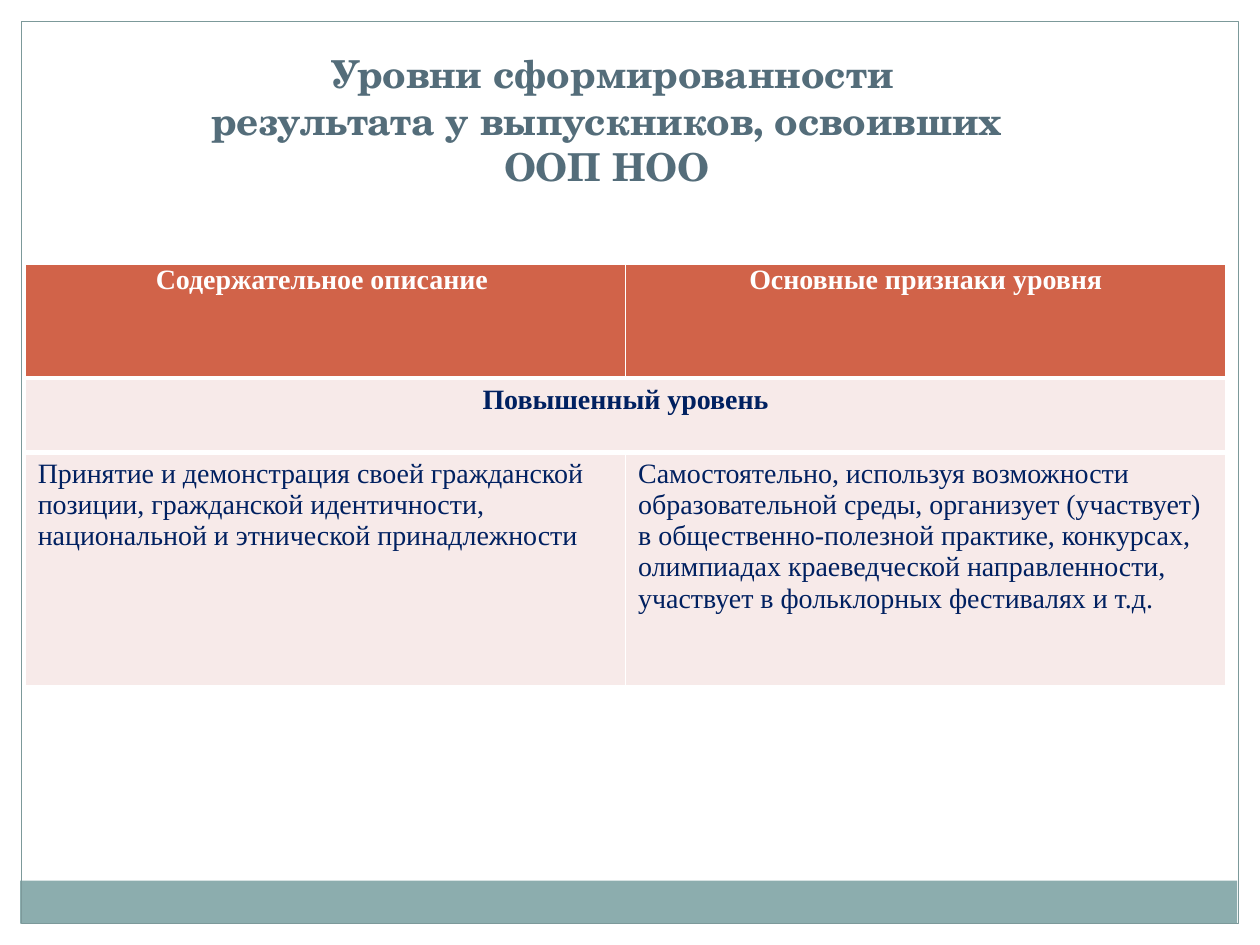
import pptx
import pptx.util
import pptx.dml.color
import pptx.enum.shapes
import pptx.enum.text
import pptx.oxml
import pptx.oxml.ns

Inches = pptx.util.Inches
Pt = pptx.util.Pt
ALIGN = pptx.enum.text.PP_ALIGN

# Content
TITLE = "Уровни сформированности\vрезультата у выпускников, освоивших \vООП НОО "
HEADERS = ["Содержательное описание ", "Основные признаки уровня"]
LEVEL = ["Повышенный уровень", ""]
DESCRIPTION = [
    "Принятие и демонстрация своей гражданской позиции, гражданской "
    "идентичности, национальной и этнической принадлежности",
    "Самостоятельно, используя возможности образовательной среды, организует "
    "(участвует) в общественно-полезной практике, конкурсах, олимпиадах "
    "краеведческой направленности, участвует в фольклорных фестивалях и т.д.",
]
COLORS = {
    "white": "FFFFFF", "band": "8CADAE", "frame": "7C999A", "title": "546D7A",
    "header": "D16349", "body": "F7EAE9", "text": "002060",
}
# Each row: texts, height, fill, text colour, bold, alignment, side and top insets,
# top and bottom border widths
ROWS = [
    (HEADERS, 0.9, "header", "white", True, ALIGN.CENTER, (0.07, 0), (1, 3)),
    (LEVEL, 0.59, "body", "text", True, ALIGN.CENTER, (0.1, 0.05), (3, 3)),
    (DESCRIPTION, 1.85, "body", "text", False, ALIGN.LEFT, (0.1, 0.05), (3, 1)),
]
# Page edges (top, right, left) and bottom band: left, top, width, height, fill
MARGIN = 0.17
FILLED_BARS = [
    (0, 0, 10, MARGIN, "white"),
    (10 - MARGIN, 0, MARGIN, 7.5, "white"),
    (0, 0, MARGIN, 7.5, "white"),
    (0.16, 6.99, 9.66, 0.34, "band"),
]


def rgb(name):
    return pptx.dml.color.RGBColor.from_string(COLORS[name])


def format_paragraph(paragraph, font_name, size, color, bold, alignment):
    paragraph.alignment = alignment
    font = paragraph.font
    font.name, font.size, font.bold = font_name, Pt(size), bold
    font.color.rgb = rgb(color)


def add_rectangle(slide, left, top, width, height):
    shape = slide.shapes.add_shape(
        pptx.enum.shapes.MSO_SHAPE.RECTANGLE,
        Inches(left), Inches(top), Inches(width), Inches(height))
    shape.shadow.inherit = False
    return shape


def set_borders(cell, top, bottom):
    properties = cell._tc.get_or_add_tcPr()
    for side, width in (("L", 1), ("R", 1), ("T", top), ("B", bottom)):
        properties.append(pptx.oxml.parse_xml(
            f'<a:ln{side} {pptx.oxml.ns.nsdecls("a")} w="{Pt(width)}"><a:solidFill>'
            f'<a:srgbClr val="{COLORS["white"]}"/></a:solidFill></a:ln{side}>'))


def add_decor(slide):
    for left, top, width, height, color in FILLED_BARS:
        bar = add_rectangle(slide, left, top, width, height)
        bar.fill.solid()
        bar.fill.fore_color.rgb = rgb(color)
        bar.line.fill.background()
    frame = add_rectangle(slide, MARGIN, MARGIN, 10 - 2 * MARGIN, 7.5 - 2 * MARGIN)
    frame.fill.background()
    frame.line.color.rgb = rgb("frame")
    frame.line.width = Pt(0.75)


def add_title(slide):
    title = slide.shapes.title
    title.left, title.top = Inches(0), Inches(0.29)
    title.width, title.height = Inches(9.72), Inches(1.26)
    text_frame = title.text_frame
    text_frame.text = TITLE
    text_frame.vertical_anchor = pptx.enum.text.MSO_ANCHOR.BOTTOM
    text_frame.auto_size = pptx.enum.text.MSO_AUTO_SIZE.NONE
    format_paragraph(text_frame.paragraphs[0], "TeX Gyre Schola", 22, "title",
                     True, ALIGN.CENTER)


def add_levels_table(slide):
    height = sum(row[1] for row in ROWS)
    table = slide.shapes.add_table(
        len(ROWS), len(HEADERS), Inches(0.2), Inches(2.1),
        Inches(9.53), Inches(height)).table
    for row_index, row in enumerate(ROWS):
        texts, row_height, fill, color, bold, alignment, insets, borders = row
        table.rows[row_index].height = Inches(row_height)
        for column_index, text in enumerate(texts):
            cell = table.cell(row_index, column_index)
            cell.text = text
            cell.margin_left = cell.margin_right = Inches(insets[0])
            cell.margin_top = cell.margin_bottom = Inches(insets[1])
            set_borders(cell, *borders)
            cell.fill.solid()
            cell.fill.fore_color.rgb = rgb(fill)
            format_paragraph(cell.text_frame.paragraphs[0], "Times New Roman", 16,
                             color, bold, alignment)
    # The level name spans both columns
    table.cell(1, 0).merge(table.cell(1, 1))


def main():
    presentation = pptx.Presentation()
    presentation.slide_width, presentation.slide_height = Inches(10), Inches(7.5)
    slide = presentation.slides.add_slide(presentation.slide_layouts[5])
    add_decor(slide)
    add_title(slide)
    add_levels_table(slide)
    presentation.save("out.pptx")


if __name__ == "__main__":
    main()
